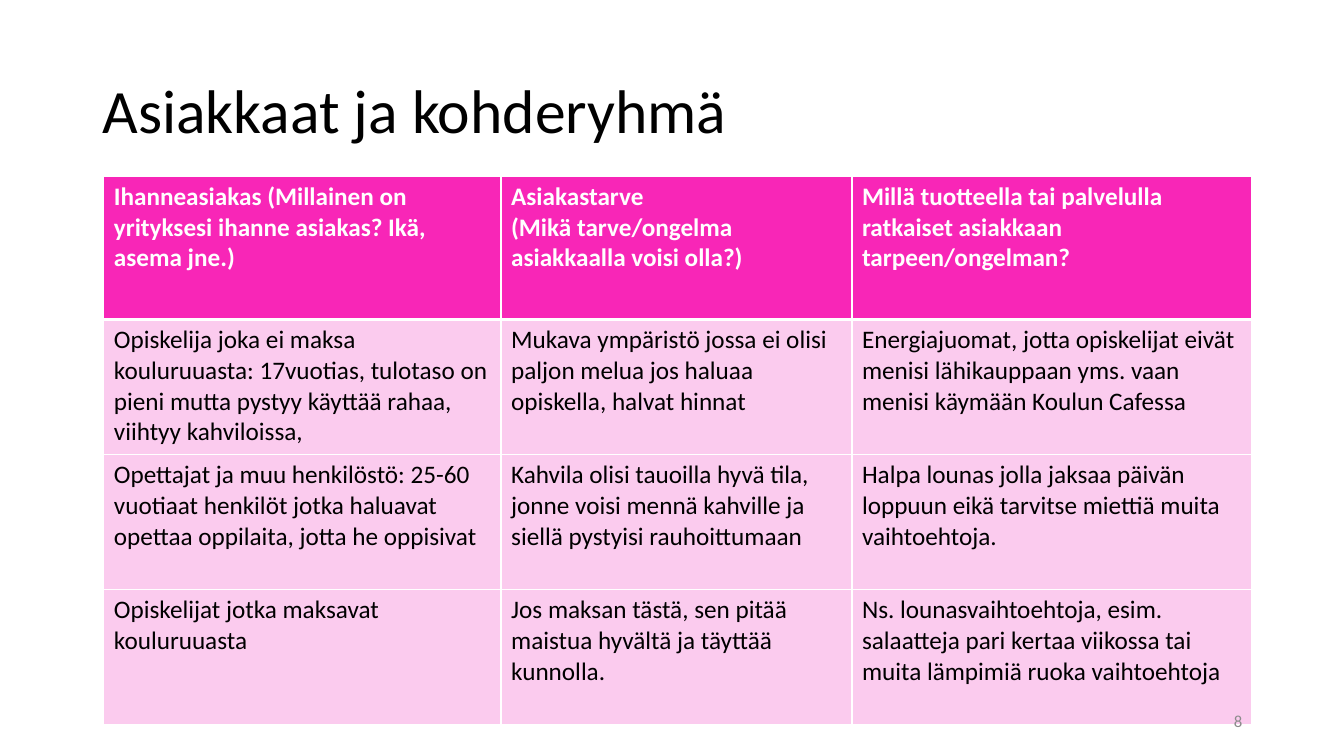
from dataclasses import dataclass

from lxml.etree import SubElement
from pptx import Presentation
from pptx.dml.color import RGBColor
from pptx.enum.text import MSO_ANCHOR, PP_ALIGN
from pptx.oxml.ns import qn
from pptx.util import Inches, Pt

LEFT, RIGHT = PP_ALIGN.LEFT, PP_ALIGN.RIGHT
MIDDLE = MSO_ANCHOR.MIDDLE

WIDTHS = [3.94, 3.48, 3.96]
HEIGHTS = [1.42, 1.34, 1.34, 1.34]
ROWS = [
    ["Ihanneasiakas (Millainen on yrityksesi ihanne asiakas? Ikä, asema jne.)",
     "Asiakastarve\n(Mikä tarve/ongelma asiakkaalla voisi olla?)",
     "Millä tuotteella tai palvelulla ratkaiset asiakkaan tarpeen/ongelman?"],
    ["Opiskelija joka ei maksa kouluruuasta: 17vuotias, tulotaso on pieni "
     "mutta pystyy käyttää rahaa, viihtyy kahviloissa,",
     "Mukava ympäristö jossa ei olisi paljon melua jos haluaa opiskella, halvat hinnat",
     "Energiajuomat, jotta opiskelijat eivät menisi lähikauppaan yms. "
     "vaan menisi käymään Koulun Cafessa"],
    ["Opettajat ja muu henkilöstö: 25-60 vuotiaat henkilöt jotka haluavat "
     "opettaa oppilaita, jotta he oppisivat",
     "Kahvila olisi tauoilla hyvä tila, jonne voisi mennä kahville ja "
     "siellä pystyisi rauhoittumaan",
     "Halpa lounas jolla jaksaa päivän loppuun eikä tarvitse miettiä muita vaihtoehtoja."],
    ["Opiskelijat jotka maksavat kouluruuasta",
     "Jos maksan tästä, sen pitää maistua hyvältä ja täyttää kunnolla.",
     "Ns. lounasvaihtoehtoja, esim. salaatteja pari kertaa viikossa tai "
     "muita lämpimiä ruoka vaihtoehtoja"],
]


@dataclass(frozen=True)
class Theme:
    """Colours, font and type sizes."""
    font: str = "Calibri"
    ink: str = "000000"
    white: str = "FFFFFF"
    grey: str = "8C8C8C"
    pink: str = "F826B7"
    pale: str = "FBCBEE"
    title: int = 44
    body: int = 18
    small: int = 12


class Deck:
    """Holds the theme and the current slide."""

    def __init__(self, theme):
        """Open a wide deck with one blank slide."""
        self.theme = theme
        self.prs = Presentation()
        self.prs.slide_width, self.prs.slide_height = Inches(13.33), Inches(7.5)
        self.slide = self.prs.slides.add_slide(self.prs.slide_layouts[6])

    def style(self, frame, size, color, bold=False):
        """Format every run of a text frame."""
        for para in frame.paragraphs:
            for run in para.runs:
                font = run.font
                font.name, font.size, font.bold = self.theme.font, Pt(size), bold
                font.color.rgb = RGBColor.from_string(color)

    def label(self, text, box, size, color, align=LEFT, spacing=1.0):
        """Add a text box centred on its height."""
        frame = self.slide.shapes.add_textbox(*map(Inches, box)).text_frame
        frame.word_wrap = True
        frame.vertical_anchor = MIDDLE
        frame.text = text
        frame.paragraphs[0].alignment = align
        frame.paragraphs[0].line_spacing = spacing
        self.style(frame, size, color)

    def border(self, cell, top, bottom):
        """Draw the four white edges of a cell."""
        props = cell._tc.get_or_add_tcPr()
        for side, width in zip("LRTB", (1, 1, top, bottom)):
            line = SubElement(props, qn(f"a:ln{side}"), w=str(Pt(width)))
            fill = SubElement(line, qn("a:solidFill"))
            SubElement(fill, qn("a:srgbClr"), val=self.theme.white)

    def table(self, rows, left, top, widths, heights):
        """Add a table with a strong header row."""
        theme = self.theme
        box = map(Inches, (left, top, sum(widths), sum(heights)))
        table = self.slide.shapes.add_table(len(rows), len(widths), *box).table
        for col, width in zip(table.columns, widths):
            col.width = Inches(width)
        for row, height in zip(table.rows, heights):
            row.height = Inches(height)
        for r, row in enumerate(rows):
            head = r == 0
            for c, text in enumerate(row):
                cell = table.cell(r, c)
                cell.text_frame.text = text
                self.style(cell.text_frame, theme.body,
                           theme.white if head else theme.ink, head)
                self.border(cell, 3 if r == 1 else 1, 3 if head else 1)
                cell.fill.solid()
                cell.fill.fore_color.rgb = RGBColor.from_string(
                    theme.pink if head else theme.pale)


def main():
    """Build the slide and save it."""
    theme = Theme()
    deck = Deck(theme)
    deck.table(ROWS, 1.03, 1.75, WIDTHS, HEIGHTS)
    deck.label("8", (9.42, 6.95, 3, 0.4), theme.small, theme.grey, RIGHT)
    deck.label("Asiakkaat ja kohderyhmä", (0.92, 0.4, 11.5, 1.45),
               theme.title, theme.ink, spacing=0.9)
    deck.prs.save("out.pptx")


if __name__ == "__main__":
    main()
